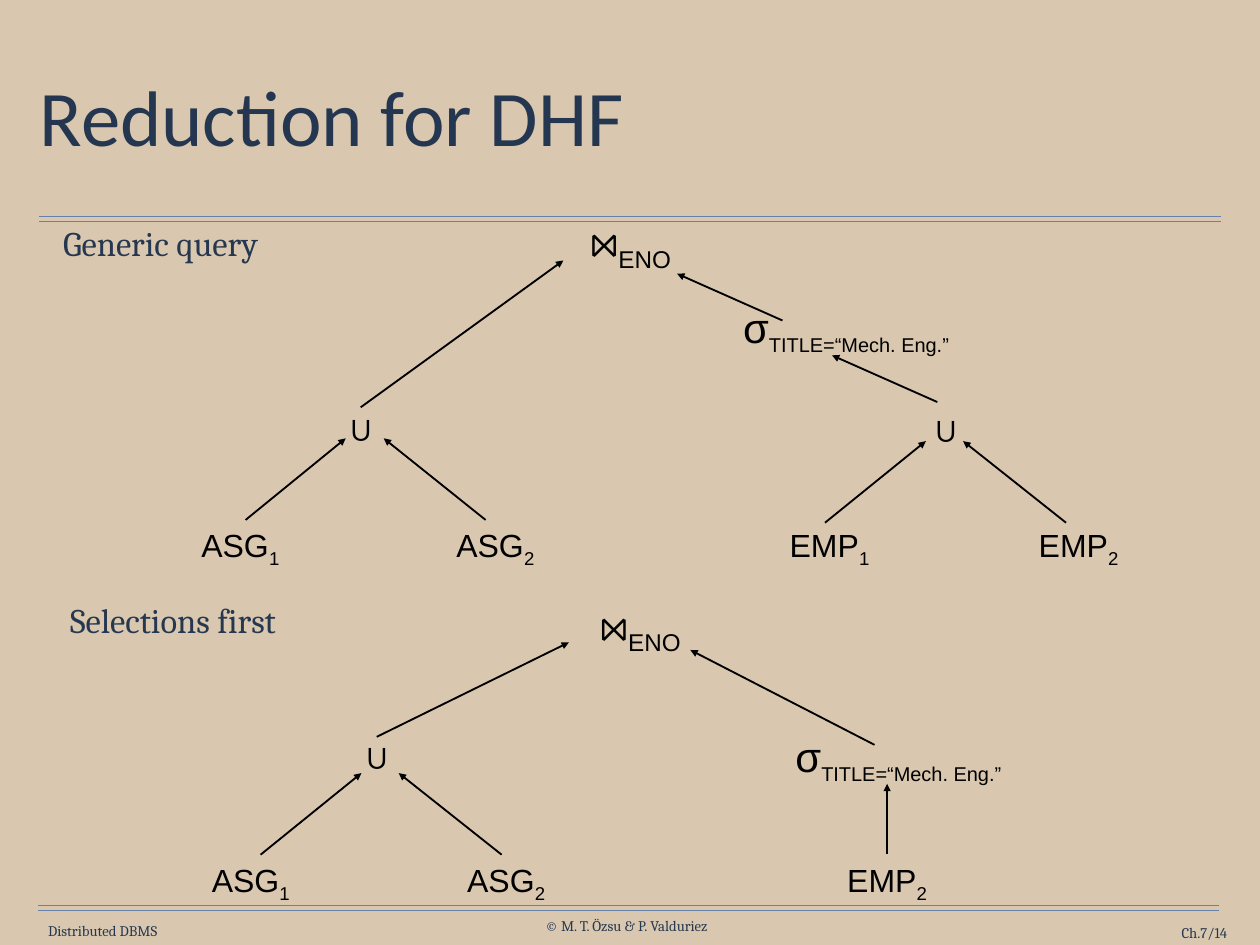
from pptx import Presentation
from pptx.dml.color import RGBColor
from pptx.enum.shapes import MSO_CONNECTOR
from pptx.enum.text import MSO_ANCHOR, MSO_AUTO_SIZE, PP_ALIGN
from pptx.oxml.ns import qn
from pptx.util import Cm, Pt
from lxml.etree import SubElement

NAVY, RULE_BLUE, BLACK = "263750", "6682AA", "000000"

deck = Presentation()
deck.slide_width, deck.slide_height = Cm(36.12), Cm(27.1)
page = deck.slides.add_slide(deck.slide_layouts[6])
page.background.fill.solid()
page.background.fill.fore_color.rgb = RGBColor.from_string("D9C8AF")


def add_text(area, spans, color=BLACK, align=PP_ALIGN.CENTER, inset=(0.36, 0.18),
             wrap=False, anchor=MSO_ANCHOR.TOP, grow=True, spacing=None):
    box = page.shapes.add_textbox(*[Cm(length) for length in area])
    frame = box.text_frame
    frame.word_wrap = wrap
    frame.auto_size = MSO_AUTO_SIZE.SHAPE_TO_FIT_TEXT if grow else MSO_AUTO_SIZE.NONE
    frame.vertical_anchor = anchor
    frame.margin_left = frame.margin_right = Cm(inset[0])
    frame.margin_top = frame.margin_bottom = Cm(inset[1])
    para = frame.paragraphs[0]
    para.alignment = align
    para.line_spacing = spacing
    for index, (words, size, typeface) in enumerate(spans):
        span = para.add_run()
        span.text = words
        span.font.size = Pt(size)
        span.font.name = typeface
        span.font.color.rgb = RGBColor.from_string(color)
        if index > 0:
            span.font._element.set("baseline", "-25000")
    return box


def add_line(start_x, start_y, end_x, end_y, color=BLACK, width=1.5, arrow=True):
    line = page.shapes.add_connector(
        MSO_CONNECTOR.STRAIGHT, Cm(start_x), Cm(start_y), Cm(end_x), Cm(end_y))
    line.line.color.rgb = RGBColor.from_string(color)
    line.line.width = Pt(width)
    if arrow:
        SubElement(line.line._get_or_add_ln(), qn("a:tailEnd"), type="triangle")
    SubElement(line._element.spPr, qn("a:effectLst"))
    return line


for left, right, top in [(1.12, 35, 6.2), (1.09, 34.95, 25.96)]:
    for y in (top, top + 0.15):
        add_line(left, y, right, y, RULE_BLUE, 1, arrow=False)

for area, words, align, wrap in [
    ((1.19, 26.44, 3.51, 0.51), "Distributed DBMS", PP_ALIGN.CENTER, False),
    ((15.32, 26.29, 5.28, 0.51), "© M. T. Özsu & P. Valduriez", PP_ALIGN.CENTER, False),
    ((31.27, 26.49, 3.91, 0.51), "Ch.7/14", PP_ALIGN.RIGHT, True),
]:
    add_text(area, [(words, 12, "Cambria")], NAVY, align, (0, 0), wrap, MSO_ANCHOR.MIDDLE)

add_text((0.99, 1.24, 34.14, 4.47), [("Reduction for DHF", 64, "Calibri")], "253750",
         PP_ALIGN.LEFT, (0.15, 0.15), True, MSO_ANCHOR.MIDDLE, False, 0.9)

for left, top, heading in [(1.45, 5.84, "Generic query"), (1.65, 16.64, "Selections first")]:
    add_text((left, top, 9.55, 1.9), [(heading, 28, "Cambria")], NAVY,
             PP_ALIGN.LEFT, wrap=True, grow=False, spacing=1.3)

for left, top in [(16.08, 5.94), (16.36, 16.94)]:
    add_text((left, top, 3.99, 1.9), [("⋈", 36, "Cambria"), ("ENO", 34, "Arial")], wrap=True)

for left, top in [(20.52, 8.48), (22.02, 20.78)]:
    add_text((left, top, 7.47, 1.8),
             [("σ", 34, "Arial"), ("TITLE=“Mech. Eng.”", 28, "Arial")])

for left, top in [(9.6, 11.48), (26.37, 11.51), (10.06, 20.9)]:
    add_text((left, top, 1.5, 1.55), [("∪", 28, "Arial")])

for left, top, relation, fragment in [
    (5.36, 14.88, "ASG", "1"),
    (12.67, 14.88, "ASG", "2"),
    (22.25, 14.88, "EMP", "1"),
    (29.39, 14.88, "EMP", "2"),
    (5.66, 24.49, "ASG", "1"),
    (12.98, 24.49, "ASG", "2"),
    (23.9, 24.49, "EMP", "2"),
]:
    leaf = add_text((left, top, 3.06, 1.47),
                    [(relation, 26, "Arial"), (fragment, 26, "Arial")])

selected_leaf = leaf
add_line(25.43, 24.49, 25.43, 22.48).begin_connect(selected_leaf, 0)

for ends in [
    (7.04, 14.91, 9.91, 12.57),
    (13.92, 14.91, 11, 12.57),
    (23.65, 14.99, 26.54, 12.65),
    (30.56, 14.99, 27.61, 12.65),
    (26.87, 11.53, 23.85, 10.19),
    (22.43, 9.19, 19.41, 7.85),
    (10.34, 11.68, 16.15, 7.47),
    (7.47, 24.51, 10.36, 22.17),
    (14.38, 24.51, 11.43, 22.17),
    (10.8, 21.13, 16.31, 18.42),
    (25.07, 21.36, 19.79, 18.64),
]:
    add_line(*ends)

deck.save("out.pptx")
